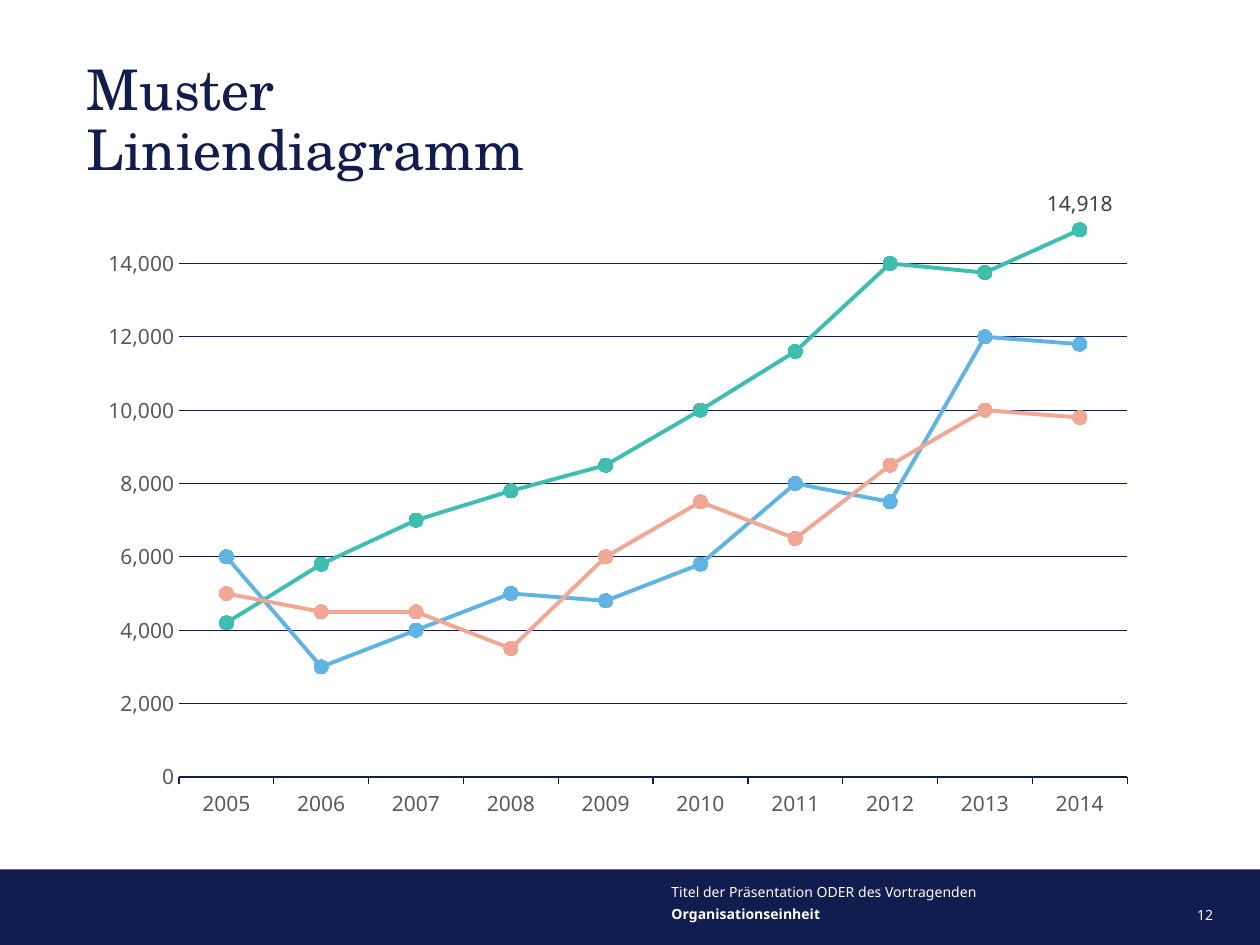
from dataclasses import dataclass

from lxml.etree import SubElement
from pptx import Presentation
from pptx.chart.data import CategoryChartData
from pptx.dml.color import RGBColor
from pptx.enum.chart import XL_CHART_TYPE as ChartType
from pptx.enum.chart import XL_LABEL_POSITION as LabelPosition
from pptx.enum.chart import XL_MARKER_STYLE as MarkerStyle
from pptx.enum.chart import XL_TICK_MARK as TickMark
from pptx.enum.shapes import MSO_SHAPE as Shape
from pptx.enum.text import MSO_ANCHOR as Anchor
from pptx.enum.text import PP_ALIGN as Align
from pptx.oxml.ns import qn
from pptx.util import Pt

COLORS = {
    "navy": "111D4E", "white": "FFFFFF", "axis": "595959", "label": "404040",
    "black": "000000", "teal": "3CBFAE", "blue": "5FB4E5", "salmon": "F0A794",
}
BODY_FONT = "Noto Sans"
TITLE_FONT = "TeX Gyre Schola"
NUMBER_FORMAT = "#,##0"


@dataclass
class Line:
    name: str
    color: str
    values: tuple[int, ...]


@dataclass
class FooterText:
    text: str
    left: float
    top: float
    width: float
    height: float
    bold: bool = False
    align: Align = Align.LEFT
    anchor: Anchor = Anchor.TOP


YEARS = [str(year) for year in range(2005, 2015)]
LINES = [
    Line("Series 1", "teal", (4200, 5800, 7000, 7800, 8500, 10000, 11600, 14000, 13750, 14918)),
    Line("Series 2", "blue", (6000, 3000, 4000, 5000, 4800, 5800, 8000, 7500, 12000, 11800)),
    Line("Series 3", "salmon", (5000, 4500, 4500, 3500, 6000, 7500, 6500, 8500, 10000, 9800)),
]
FOOTER = [
    FooterText("Organisationseinheit", 376.6, 514.1, 286.6, 18.7, bold=True),
    FooterText("Titel der Präsentation ODER des Vortragenden", 376.6, 501.1, 286.6, 18),
    FooterText("12", 670.3, 506.9, 36.7, 24.5, align=Align.CENTER, anchor=Anchor.BOTTOM),
]


def rgb(color: str) -> RGBColor:
    return RGBColor.from_string(COLORS[color])


def style_font(font, size: float, color: str, name: str = BODY_FONT, bold: bool = False) -> None:
    font.name, font.size, font.bold = name, Pt(size), bold
    font.color.rgb = rgb(color)


def style_line(line, color: str, width: float) -> None:
    line.color.rgb = rgb(color)
    line.width = Pt(width)


def add_footer_text(slide, item: FooterText) -> None:
    box = slide.shapes.add_textbox(Pt(item.left), Pt(item.top), Pt(item.width), Pt(item.height))
    frame = box.text_frame
    frame.word_wrap = True
    frame.vertical_anchor = item.anchor
    paragraph = frame.paragraphs[0]
    paragraph.alignment = item.align
    run = paragraph.add_run()
    run.text = item.text
    style_font(run.font, 8, "white", bold=item.bold)


def add_title(slide) -> None:
    title = slide.shapes.title
    title.left, title.top, title.width, title.height = Pt(49.7), Pt(28.8), Pt(620.6), Pt(76.3)
    frame = title.text_frame
    frame.word_wrap = True
    frame.margin_left = frame.margin_right = frame.margin_bottom = 0
    frame.margin_top = Pt(5.76)
    paragraph = frame.paragraphs[0]
    paragraph.alignment = Align.LEFT
    paragraph.line_spacing = 0.9
    for index, text in enumerate(("Muster ", "Liniendiagramm")):
        if index:
            paragraph.add_line_break()
        run = paragraph.add_run()
        run.text = text
        style_font(run.font, 32, "navy", TITLE_FONT)


def set_plot_layout(chart, x: float, y: float, w: float, h: float) -> None:
    plot_area = chart._chartSpace.chart.plotArea
    layout = plot_area.find(qn("c:layout"))
    if layout is None:
        layout = SubElement(plot_area, qn("c:layout"))
        plot_area.insert(0, layout)
    manual = SubElement(layout, qn("c:manualLayout"))
    settings = {"layoutTarget": "inner", "xMode": "edge", "yMode": "edge",
                "x": x, "y": y, "w": w, "h": h}
    for tag, value in settings.items():
        SubElement(manual, qn(f"c:{tag}")).set("val", str(value))


def style_series(series, line: Line) -> None:
    series.smooth = False
    style_line(series.format.line, line.color, 2.25)
    marker = series.marker
    marker.style, marker.size = MarkerStyle.CIRCLE, 8
    marker.format.fill.solid()
    marker.format.fill.fore_color.rgb = rgb(line.color)
    marker.format.line.color.rgb = rgb(line.color)


def add_line_chart(slide) -> None:
    data = CategoryChartData(number_format=NUMBER_FORMAT)
    data.categories = YEARS
    for line in LINES:
        data.add_series(line.name, line.values)
    chart = slide.shapes.add_chart(
        ChartType.LINE_MARKERS, Pt(47.5), Pt(105.8), Pt(622.8), Pt(391), data).chart
    chart.has_legend = chart.has_title = False
    style_font(chart.font, 10, "black")
    set_plot_layout(chart, 0.088, 0.061, 0.87, 0.804)

    # Axes
    years, amounts = chart.category_axis, chart.value_axis
    for axis in (years, amounts):
        style_font(axis.tick_labels.font, 12, "axis")
        axis.minor_tick_mark = TickMark.NONE
    years.major_tick_mark = TickMark.OUTSIDE
    style_line(years.format.line, "navy", 0.75)
    amounts.major_tick_mark = TickMark.NONE
    amounts.format.line.fill.background()
    amounts.minimum_scale, amounts.maximum_scale, amounts.major_unit = 0, 15000, 2000
    amounts.tick_labels.number_format = NUMBER_FORMAT
    amounts.tick_labels.number_format_is_linked = False
    amounts.has_major_gridlines = True
    style_line(amounts.major_gridlines.format.line, "navy", 0.75)

    # Lines, with the last value of the first one labelled
    plot = chart.plots[0]
    plot.vary_by_categories = False
    for series, line in zip(plot.series, LINES):
        style_series(series, line)
    leader = plot.series[0]
    leader.data_labels.show_value = False
    last_label = leader.points[len(YEARS) - 1].data_label
    style_font(last_label.font, 12, "label")
    last_label.position = LabelPosition.ABOVE


def main() -> None:
    deck = Presentation()
    deck.slide_width, deck.slide_height = Pt(720), Pt(540)
    slide = deck.slides.add_slide(deck.slide_layouts[5])

    # Footer band
    band = slide.shapes.add_shape(Shape.RECTANGLE, 0, Pt(496.8), Pt(720), Pt(43.2))
    band.shadow.inherit = False
    band.fill.solid()
    band.fill.fore_color.rgb = rgb("navy")
    band.line.fill.background()
    for item in FOOTER:
        add_footer_text(slide, item)

    add_title(slide)
    add_line_chart(slide)
    deck.save("out.pptx")


if __name__ == "__main__":
    main()
